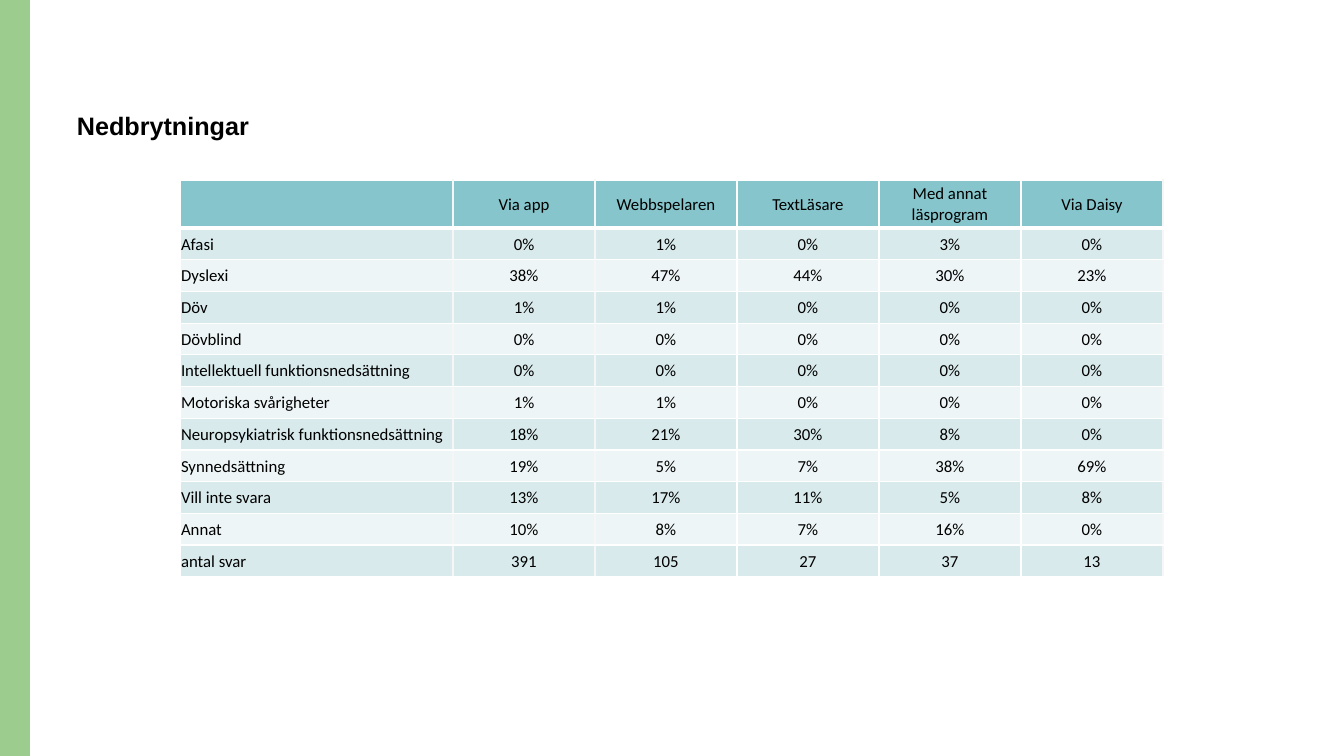
from lxml.etree import SubElement
from pptx import Presentation
from pptx.dml.color import RGBColor
from pptx.enum.shapes import MSO_SHAPE as Shape
from pptx.enum.text import MSO_ANCHOR as Anchor, PP_ALIGN as Align
from pptx.oxml.ns import qn
from pptx.util import Pt

HEADING = "Nedbrytningar"
HEADERS = ["", "Via app", "Webbspelaren", "TextLäsare", "Med annat läsprogram", "Via Daisy"]
ANSWERS = [
    ("Afasi", "0%", "1%", "0%", "3%", "0%"),
    ("Dyslexi", "38%", "47%", "44%", "30%", "23%"),
    ("Döv", "1%", "1%", "0%", "0%", "0%"),
    ("Dövblind", "0%", "0%", "0%", "0%", "0%"),
    ("Intellektuell funktionsnedsättning", "0%", "0%", "0%", "0%", "0%"),
    ("Motoriska svårigheter", "1%", "1%", "0%", "0%", "0%"),
    ("Neuropsykiatrisk funktionsnedsättning", "18%", "21%", "30%", "8%", "0%"),
    ("Synnedsättning", "19%", "5%", "7%", "38%", "69%"),
    ("Vill inte svara", "13%", "17%", "11%", "5%", "8%"),
    ("Annat", "10%", "8%", "7%", "16%", "0%"),
    ("antal svar", "391", "105", "27", "37", "13"),
]

BLACK = RGBColor(0x00, 0x00, 0x00)
WHITE = RGBColor(0xFF, 0xFF, 0xFF)
PALE_GREY = RGBColor(0xF6, 0xF6, 0xF6)
GREEN = RGBColor(0x9D, 0xCC, 0x8F)
TEAL = RGBColor(0x85, 0xC5, 0xCB)
BANDS = [RGBColor(0xED, 0xF5, 0xF6), RGBColor(0xD9, 0xEA, 0xEC)]
COLUMN_EDGES = [WHITE, PALE_GREY, PALE_GREY, WHITE, WHITE, WHITE, PALE_GREY]

SLIDE_W, SLIDE_H = 1344, 756
STRIPE_W = 30
TABLE_X, TABLE_Y, TABLE_H = 180, 180, 397
LABEL_W, ANSWER_W, HEADER_H = 273, 142, 48


def px(length):
    return round(length * 914400 / 100.8)


def write(paragraph, text, face, size, bold):
    run = paragraph.add_run()
    run.text = text
    run.font.name = face
    run.font.size = Pt(size)
    run.font.bold = bold
    run.font.color.rgb = BLACK


def add_border(cell, side, color, width):
    line = SubElement(cell._tc.get_or_add_tcPr(), qn(f"a:ln{side}"), w=str(Pt(width)))
    SubElement(SubElement(line, qn("a:solidFill")), qn("a:srgbClr"), val=str(color))


def fill_cell(cell, row, col, text):
    add_border(cell, "L", COLUMN_EDGES[col], 1)
    add_border(cell, "R", COLUMN_EDGES[col + 1], 1)
    add_border(cell, "T", WHITE, 1)
    add_border(cell, "B", WHITE, 1 if row else 3)
    cell.fill.solid()
    cell.fill.fore_color.rgb = BANDS[row % 2] if row else TEAL
    cell.vertical_anchor = Anchor.MIDDLE
    cell.margin_left = cell.margin_right = cell.margin_top = px(1)
    cell.margin_bottom = 0
    if text:
        paragraph = cell.text_frame.paragraphs[0]
        paragraph.alignment = Align.CENTER if col else Align.LEFT
        write(paragraph, text, "Calibri", 12, False)


deck = Presentation()
deck.slide_width, deck.slide_height = px(SLIDE_W), px(SLIDE_H)
slide = deck.slides.add_slide(deck.slide_layouts[6])

stripe = slide.shapes.add_shape(Shape.RECTANGLE, 0, 0, px(STRIPE_W), px(SLIDE_H))
stripe.shadow.inherit = False
stripe.fill.solid()
stripe.fill.fore_color.rgb = GREEN
stripe.line.fill.background()

heading = slide.shapes.add_textbox(px(67), px(51), px(1205), px(100)).text_frame
heading.word_wrap = True
heading.vertical_anchor = Anchor.BOTTOM
heading.margin_bottom = px(10)
heading.paragraphs[0].line_spacing = 0.9
write(heading.paragraphs[0], HEADING, "Arial", 18, True)

rows = [HEADERS, *ANSWERS]
table_w = LABEL_W + ANSWER_W * (len(HEADERS) - 1)
breakdown = slide.shapes.add_table(
    len(rows), len(HEADERS), px(TABLE_X), px(TABLE_Y), px(table_w), px(TABLE_H)
).table
breakdown.horz_banding = False
for col, column in enumerate(breakdown.columns):
    column.width = px(ANSWER_W if col else LABEL_W)
for row, texts in enumerate(rows):
    answer_h = (TABLE_H - HEADER_H) / len(ANSWERS)
    breakdown.rows[row].height = px(answer_h if row else HEADER_H)
    for col, text in enumerate(texts):
        fill_cell(breakdown.cell(row, col), row, col, text)

deck.save("out.pptx")
